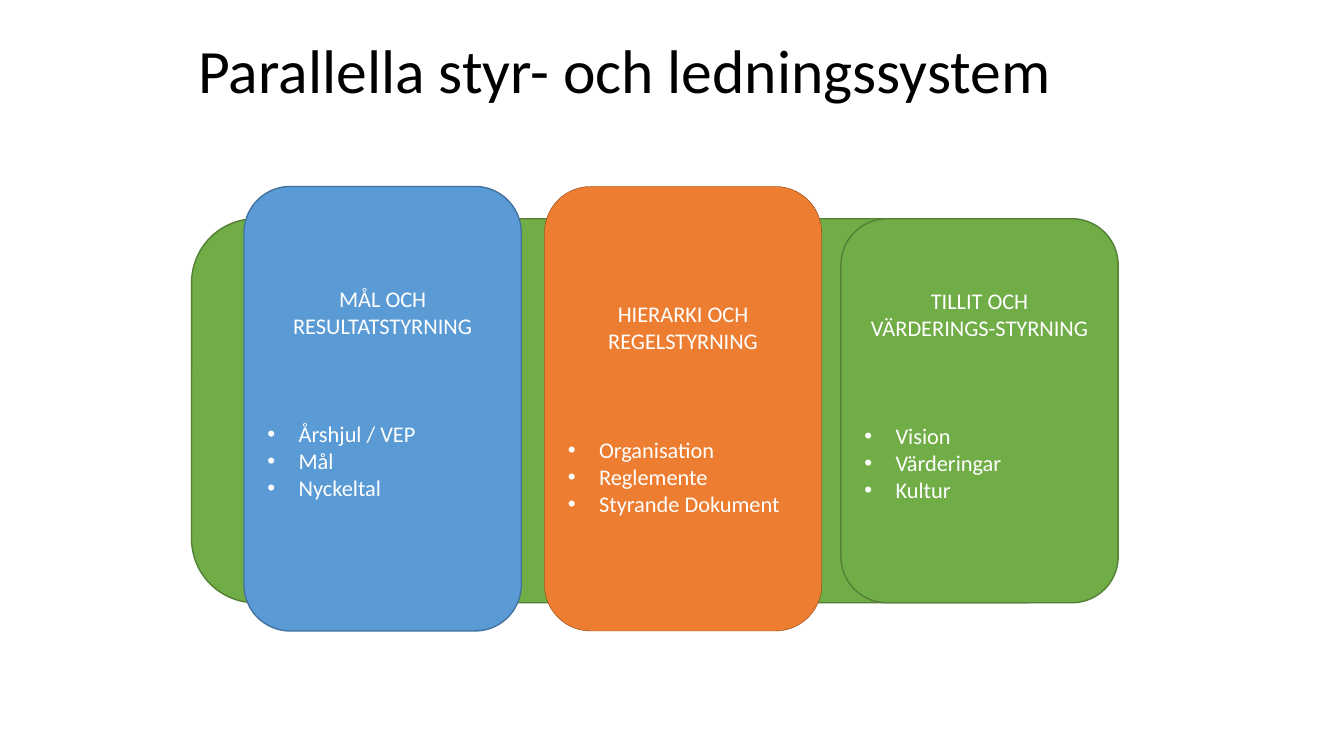
from dataclasses import dataclass

from lxml.etree import SubElement
from pptx import Presentation
from pptx.dml.color import RGBColor
from pptx.enum.shapes import MSO_SHAPE
from pptx.enum.text import MSO_ANCHOR, PP_ALIGN
from pptx.oxml.ns import qn
from pptx.shapes.autoshape import Shape
from pptx.slide import Slide
from pptx.text.text import TextFrame
from pptx.util import Pt

PX = 9144  # EMU per px, 100 px to the inch
FONT = "Calibri"
BLACK = RGBColor(0x00, 0x00, 0x00)
WHITE = RGBColor(0xFF, 0xFF, 0xFF)
GREEN = RGBColor(0x70, 0xAD, 0x47)
MOSS = RGBColor(0x53, 0x80, 0x35)
BLUE = RGBColor(0x5B, 0x9B, 0xD5)
NAVY = RGBColor(0x43, 0x73, 0x9E)
ORANGE = RGBColor(0xED, 0x7D, 0x31)
BROWN = RGBColor(0x84, 0x3C, 0x0B)


@dataclass(frozen=True)
class Box:
    left: int
    top: int
    width: int
    height: int
    fill: RGBColor
    edge: RGBColor
    weight: float = 1


@dataclass(frozen=True)
class Card:
    box: Box
    head: list[str]
    items: list[str]
    foot: int  # bottom inset, px


BAND = Box(190, 217, 888, 381, GREEN, MOSS)
CARDS = [
    Card(Box(242, 185, 275, 441, BLUE, NAVY),
         ["MÅL OCH RESULTATSTYRNING"],
         ["Årshjul / VEP", "Mål", "Nyckeltal"], 36),
    Card(Box(540, 185, 275, 441, ORANGE, BROWN, 0.25),
         ["HIERARKI OCH", "REGELSTYRNING"],
         ["Organisation", "Reglemente", "Styrande Dokument"], 5),
    Card(Box(834, 217, 275, 381, GREEN, MOSS),
         ["TILLIT OCH", "VÄRDERINGS-STYRNING"],
         ["Vision", "Värderingar", "Kultur"], 36),
]


def draw_box(slide: Slide, box: Box) -> Shape:
    shape = slide.shapes.add_shape(
        MSO_SHAPE.ROUNDED_RECTANGLE, box.left * PX, box.top * PX,
        box.width * PX, box.height * PX)
    shape.shadow.inherit = False
    shape.fill.solid()
    shape.fill.fore_color.rgb = box.fill
    shape.line.color.rgb = box.edge
    shape.line.width = Pt(box.weight)
    return shape


def add_run(para, text: str, size: int, color: RGBColor) -> None:
    run = para.add_run()
    run.text = text
    run.font.name = FONT
    run.font.size = Pt(size)
    run.font.color.rgb = color


def add_item(frame: TextFrame, text: str, first: bool) -> None:
    para = frame.add_paragraph()
    props = para._p.get_or_add_pPr()
    props.set("marL", str(31 * PX))
    props.set("indent", str(-31 * PX))
    SubElement(props, qn("a:buFont")).set("typeface", "Arial")
    SubElement(props, qn("a:buChar")).set("char", "•")
    para.alignment = PP_ALIGN.LEFT
    if first:
        para.space_before = Pt(58.5)  # gap below the heading
    add_run(para, text, 16, WHITE)


def draw_card(slide: Slide, card: Card) -> None:
    frame = draw_box(slide, card.box).text_frame
    frame.word_wrap = True
    frame.vertical_anchor = MSO_ANCHOR.MIDDLE
    frame.margin_bottom = card.foot * PX
    head = frame.paragraphs[0]
    head.alignment = PP_ALIGN.CENTER
    for i, line in enumerate(card.head):
        if i:
            head.add_line_break()
        add_run(head, line, 16, WHITE)
    for i, item in enumerate(card.items):
        add_item(frame, item, i == 0)


def draw_title(slide: Slide, text: str) -> None:
    frame = slide.shapes.add_textbox(
        187 * PX, 0, 1146 * PX, 145 * PX).text_frame
    frame.word_wrap = True
    frame.vertical_anchor = MSO_ANCHOR.MIDDLE
    para = frame.paragraphs[0]
    para.line_spacing = 0.9
    add_run(para, text, 44, BLACK)


def main() -> None:
    deck = Presentation()
    deck.slide_width = 1333 * PX
    deck.slide_height = 750 * PX
    slide = deck.slides.add_slide(deck.slide_layouts[6])

    # Band behind the cards, then the title and the cards
    draw_box(slide, BAND)
    draw_title(slide, "Parallella styr- och ledningssystem")
    for card in CARDS:
        draw_card(slide, card)
    deck.save("out.pptx")


if __name__ == "__main__":
    main()
